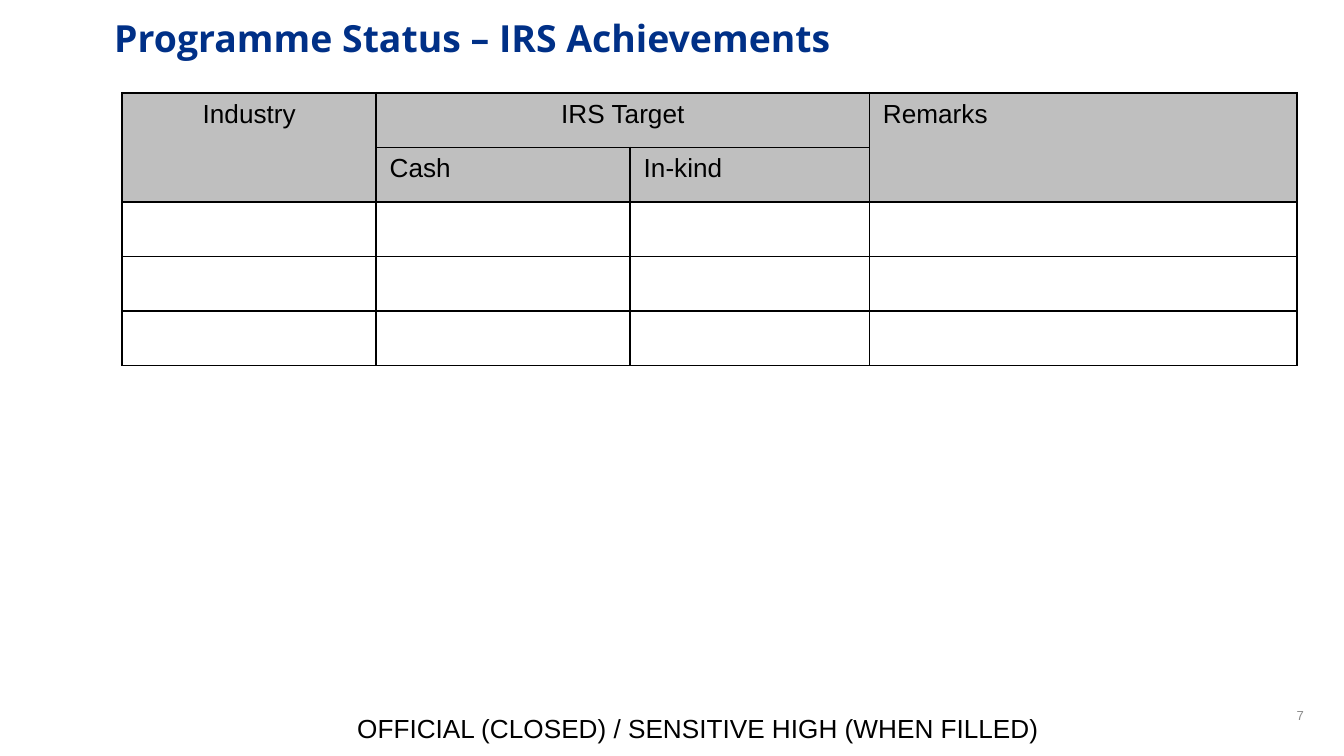
from lxml import etree
from pptx import Presentation
from pptx.dml.color import RGBColor
from pptx.enum import text
from pptx.oxml import ns
from pptx.util import Inches, Pt

COLORS = {"title": "003087", "text": "000000", "number": "8C8C8C",
          "header": "BFBFBF", "border": "000000"}


def style(p, size, color, font="Arial", bold=False, align=text.PP_ALIGN.LEFT):
    p.alignment = align
    p.font.size = Pt(size)
    p.font.name = font
    p.font.bold = bold
    p.font.color.rgb = RGBColor.from_string(COLORS[color])


def add_borders(cell):
    props = cell._tc.get_or_add_tcPr()
    for i, side in enumerate(("lnL", "lnR", "lnT", "lnB")):
        ln = etree.Element(ns.qn(f"a:{side}"), w=str(Pt(1)))
        fill = etree.SubElement(ln, ns.qn("a:solidFill"))
        etree.SubElement(fill, ns.qn("a:srgbClr"), val=COLORS["border"])
        props.insert(i, ln)


# Widescreen 16:9 slide
prs = Presentation()
prs.slide_width, prs.slide_height = Inches(10), Inches(10 * 9 / 16)
s = prs.slides.add_slide(prs.slide_layouts[5])

# Title
title = s.shapes.title
title.left, title.top = Inches(0.75), Inches(0.06)
title.width, title.height = Inches(8.66), Inches(0.79)
tf = title.text_frame
tf.text = "Programme Status – IRS Achievements"
tf.auto_size = text.MSO_AUTO_SIZE.NONE
tf.vertical_anchor = text.MSO_ANCHOR.TOP
style(tf.paragraphs[0], 20, "title", "Open Sans", bold=True)

# Table grid
col_widths = [1.89, 1.89, 1.78, 3.18]
row_count, header_rows, table_height = 5, 2, 2.03
table = s.shapes.add_table(row_count, len(col_widths), Inches(0.91), Inches(0.69),
                           Inches(sum(col_widths)), Inches(table_height)).table
for col, width in zip(table.columns, col_widths):
    col.width = Inches(width)
for r, row in enumerate(table.rows):
    row.height = Inches(table_height / row_count)
    for cell in row.cells:
        if r < header_rows:
            cell.fill.solid()
            cell.fill.fore_color.rgb = RGBColor.from_string(COLORS["header"])
        else:
            cell.fill.background()
        add_borders(cell)
        style(cell.text_frame.paragraphs[0], 14, "text")

# Table headings
table.cell(0, 0).merge(table.cell(1, 0))
table.cell(0, 1).merge(table.cell(0, 2))
table.cell(0, 3).merge(table.cell(1, 3))
center, left = text.PP_ALIGN.CENTER, text.PP_ALIGN.LEFT
for r, c, heading, align in [(0, 0, "Industry", center), (0, 1, "IRS Target", center),
                             (0, 3, "Remarks", left), (1, 1, "Cash", left),
                             (1, 2, "In-kind", left)]:
    p = table.cell(r, c).text_frame.paragraphs[0]
    p.text = heading
    style(p, 14, "text", align=align)

# Footer: slide number and classification
for words, box, size, color, align, anchor in [
    ("7", (7.47, 5.17, 2.33, 0.3), 7, "number",
     text.PP_ALIGN.RIGHT, text.MSO_ANCHOR.MIDDLE),
    ("OFFICIAL (CLOSED) / SENSITIVE HIGH (WHEN FILLED)", (2.56, 5.25, 5.43, 0.34), 14,
     "text", left, text.MSO_ANCHOR.TOP),
]:
    tf = s.shapes.add_textbox(*map(Inches, box)).text_frame
    tf.word_wrap = True
    tf.vertical_anchor = anchor
    tf.text = words
    style(tf.paragraphs[0], size, color, align=align)

prs.save("out.pptx")
